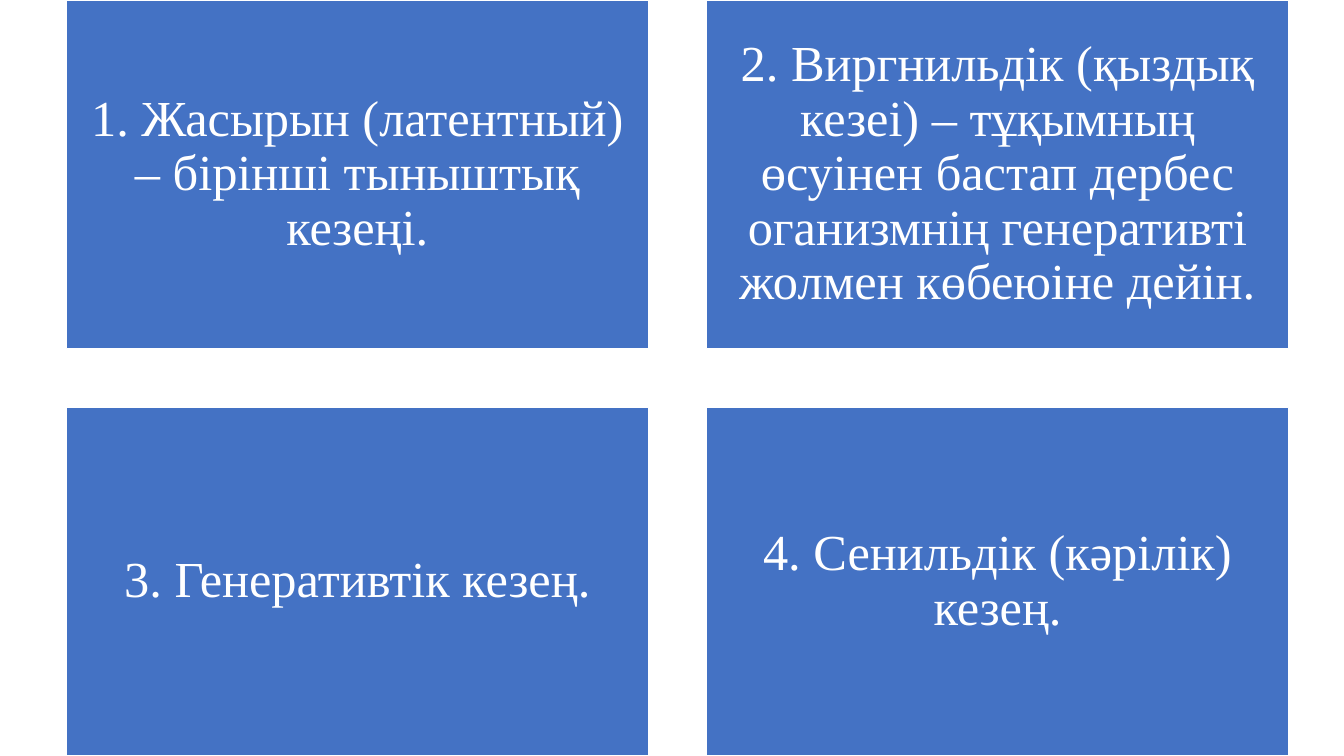
"""Builds a slide with the four periods of plant life in a two-by-two grid."""
from pptx import Presentation
from pptx import util as u
from pptx.dml.color import RGBColor
from pptx.enum import shapes, text

PERIODS = [
    "1. Жасырын (латентный) – бірінші тыныштық кезеңі.",
    "2. Виргнильдік (қыздық кезеі) – тұқымның өсуінен бастап дербес "
    "оганизмнің генеративті жолмен көбеюіне дейін.",
    "3. Генеративтік кезең.",
    "4. Сенильдік (кәрілік) кезең.",
]
COLUMNS = 2
LEFT, TOP = 0.66, 0
WIDTH, HEIGHT, GAP = 5.77, 3.46, 0.58


def colour(code):
    return RGBColor.from_string(code)


class PeriodSlide:
    font = "Times New Roman"
    size = 36
    fill = "4472C4"
    light = "FFFFFF"
    inset = 0.15

    def __init__(self, deck):
        self.page = deck.slides.add_slide(deck.slide_layouts[6])

    def card(self, left, top, width, height, wording):
        box = self.page.shapes.add_shape(
            shapes.MSO_SHAPE.RECTANGLE,
            u.Inches(left), u.Inches(top), u.Inches(width), u.Inches(height))
        box.shadow.inherit = False
        box.fill.solid()
        box.fill.fore_color.rgb = colour(self.fill)
        box.line.color.rgb = colour(self.light)
        box.line.width = u.Pt(1)
        self.label(box.text_frame, wording)

    def label(self, frame, wording):
        frame.text = wording
        frame.word_wrap = True
        frame.vertical_anchor = text.MSO_ANCHOR.MIDDLE
        frame.margin_left = frame.margin_right = u.Inches(self.inset)
        frame.margin_top = frame.margin_bottom = u.Inches(self.inset)
        para = frame.paragraphs[0]
        para.alignment = text.PP_ALIGN.CENTER
        para.line_spacing = 0.9
        span = para.runs[0]
        span.font.name = self.font
        span.font.size = u.Pt(self.size)
        span.font.color.rgb = colour(self.light)


def main():
    deck = Presentation()
    deck.slide_width = u.Inches(13.33)
    deck.slide_height = u.Inches(7.5)
    slide = PeriodSlide(deck)
    for index, wording in enumerate(PERIODS):
        row, column = divmod(index, COLUMNS)
        slide.card(LEFT + column * (WIDTH + GAP), TOP + row * (HEIGHT + GAP),
                   WIDTH, HEIGHT, wording)
    deck.save("out.pptx")


if __name__ == "__main__":
    main()
